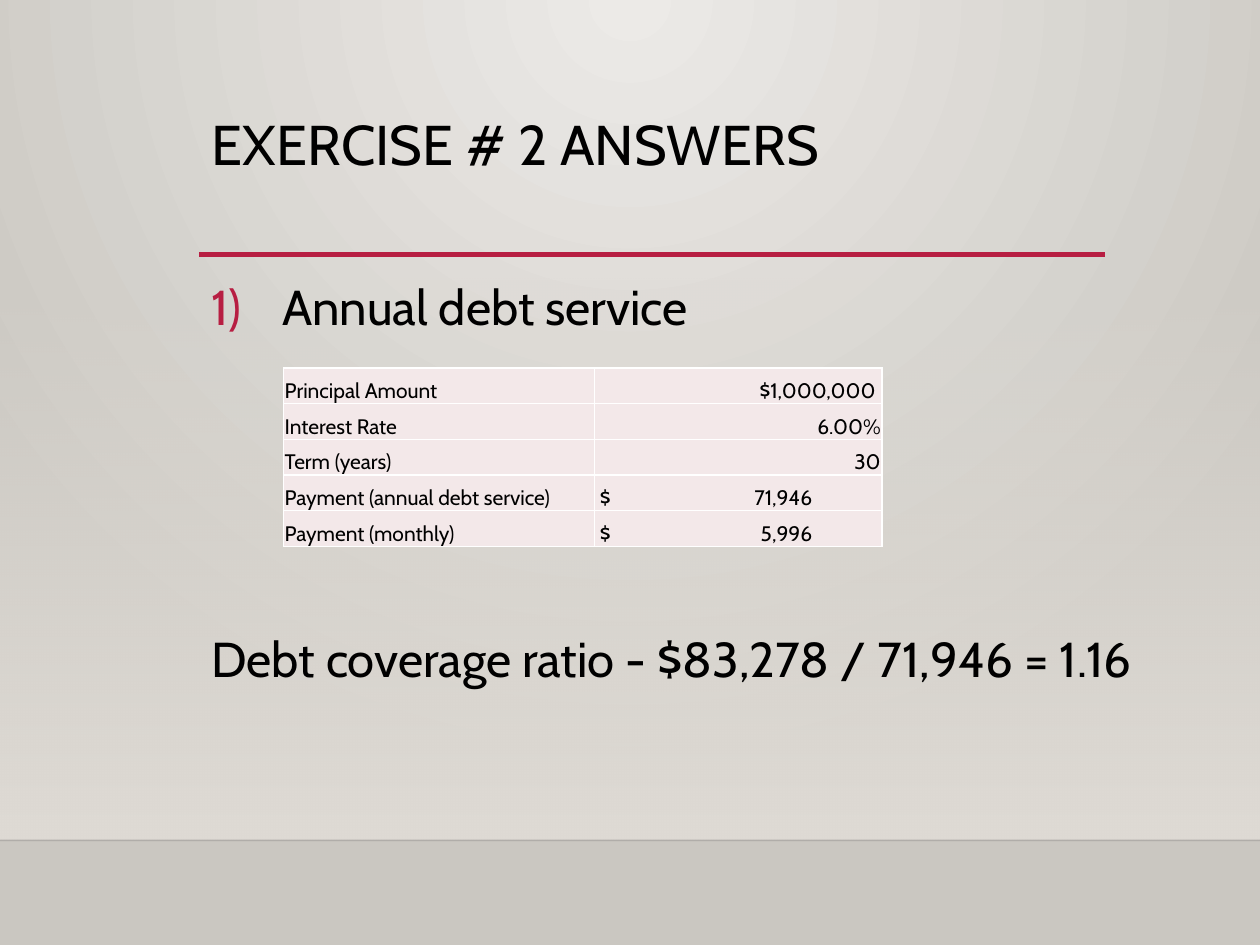
from dataclasses import dataclass

from lxml.etree import SubElement
from pptx import Presentation
from pptx.dml.color import RGBColor
from pptx.enum.shapes import MSO_CONNECTOR, MSO_SHAPE
from pptx.enum.text import MSO_ANCHOR, MSO_AUTO_SIZE, PP_ALIGN
from pptx.oxml.ns import qn
from pptx.util import Pt

FONT = "Cabin"
BLACK = RGBColor(0x00, 0x00, 0x00)
NEAR_BLACK = RGBColor(0x00, 0x00, 0x01)
WHITE = RGBColor(0xFF, 0xFF, 0xFF)
CRIMSON = RGBColor(0xB7, 0x1E, 0x42)
BLUSH = RGBColor(0xF3, 0xE8, 0xE9)
WALL_LIGHT = RGBColor(0xEC, 0xEA, 0xE7)
WALL_DARK = RGBColor(0xCA, 0xC7, 0xC1)
HAZE = RGBColor(0xDF, 0xDB, 0xD5)

SLIDE_WIDTH, SLIDE_HEIGHT = 720, 540
CONTENT_LEFT, CONTENT_WIDTH = 113.76, 517.7
FLOOR_TOP = 480.24
AMOUNT_TAB = 121.5


@dataclass(frozen=True)
class LoanTerm:
    label: str
    amount: str
    left_inset: float = 0.72
    right_inset: float = 0.72
    align: PP_ALIGN = PP_ALIGN.RIGHT


@dataclass(frozen=True)
class Rule:
    left: float
    right: float
    y: float
    color: RGBColor
    width: float
    opacity: int = 100


LOAN_TERMS = [
    LoanTerm("Principal Amount", "$1,000,000", right_inset=3.6),
    LoanTerm("Interest Rate", "6.00%"),
    LoanTerm("Term (years)", "30"),
    LoanTerm("Payment (annual debt service)", "$\t71,946", 3, align=PP_ALIGN.LEFT),
    LoanTerm("Payment (monthly)", "$\t5,996", 3, align=PP_ALIGN.LEFT),
]
RULES = [
    Rule(0, SLIDE_WIDTH, FLOOR_TOP, NEAR_BLACK, 1, opacity=20),
    Rule(CONTENT_LEFT, CONTENT_LEFT + CONTENT_WIDTH, 145.5, CRIMSON, 2.5),
]


def add_color(parent, color: RGBColor, opacity: int = 100) -> None:
    srgb = SubElement(parent, qn("a:srgbClr"), val=str(color))
    if opacity < 100:
        SubElement(srgb, qn("a:alpha"), val=str(opacity * 1000))


def swap_solid_for_gradient(properties, stops):
    solid = properties.find(qn("a:solidFill"))
    gradient = SubElement(properties, qn("a:gradFill"), rotWithShape="1")
    properties.replace(solid, gradient)
    stop_list = SubElement(gradient, qn("a:gsLst"))
    for position, (color, opacity) in zip((0, 100000), stops):
        stop = SubElement(stop_list, qn("a:gs"), pos=str(position))
        add_color(stop, color, opacity)
    return gradient


def write_text(paragraph, text: str, *, size: float, color: RGBColor = BLACK,
               align: PP_ALIGN = PP_ALIGN.LEFT, line_spacing: float = 1.0,
               space_before: float = 0) -> None:
    paragraph.alignment = align
    paragraph.line_spacing = line_spacing
    paragraph.space_before = Pt(space_before)
    run = paragraph.add_run()
    run.text = text
    run.font.name = FONT
    run.font.size = Pt(size)
    run.font.bold = False
    run.font.color.rgb = color


def paint_backdrop(slide) -> None:
    slide.background.fill.solid()
    wall = slide.background._cSld.bg.bgPr
    gradient = swap_solid_for_gradient(wall, [(WALL_LIGHT, 100), (WALL_DARK, 100)])
    path = SubElement(gradient, qn("a:path"), path="circle")
    SubElement(path, qn("a:fillToRect"), l="43000", t="0", r="43000", b="100000")

    haze = slide.shapes.add_shape(MSO_SHAPE.RECTANGLE, 0, Pt(158.4), Pt(SLIDE_WIDTH),
                                  Pt(FLOOR_TOP - 158.4))
    haze.shadow.inherit = False
    haze.line.fill.background()
    haze.fill.solid()
    gradient = swap_solid_for_gradient(haze._element.spPr, [(HAZE, 0), (HAZE, 100)])
    SubElement(gradient, qn("a:lin"), ang="5400000", scaled="0")


def draw_rule(slide, rule: Rule) -> None:
    line = slide.shapes.add_connector(MSO_CONNECTOR.STRAIGHT, Pt(rule.left), Pt(rule.y),
                                      Pt(rule.right), Pt(rule.y))
    line.line.color.rgb = rule.color
    line.line.width = Pt(rule.width)
    if rule.opacity < 100:
        srgb = line._element.spPr.find(".//" + qn("a:srgbClr"))
        SubElement(srgb, qn("a:alpha"), val=str(rule.opacity * 1000))
    SubElement(line._element.spPr, qn("a:effectLst"))


def place_title(slide) -> None:
    title = slide.shapes.title
    title.left, title.top = Pt(CONTENT_LEFT), Pt(63.36)
    title.width, title.height = Pt(CONTENT_WIDTH), Pt(82.8)
    frame = title.text_frame
    frame.auto_size = MSO_AUTO_SIZE.NONE
    frame.vertical_anchor = MSO_ANCHOR.TOP
    write_text(frame.paragraphs[0], "EXERCISE # 2 ANSWERS", size=32, line_spacing=0.9)


def add_answers(slide) -> None:
    answers = slide.shapes.add_textbox(Pt(CONTENT_LEFT), Pt(158.4), Pt(564.5), Pt(271.4))
    frame = answers.text_frame
    frame.word_wrap = True
    service = frame.paragraphs[0]
    write_text(service, "Annual debt service", size=28, line_spacing=0.9)
    numbering = service._p.get_or_add_pPr()
    numbering.set("marL", str(Pt(40.5)))
    numbering.set("indent", str(Pt(-40.5)))
    add_color(SubElement(numbering, qn("a:buClr")), CRIMSON)
    SubElement(numbering, qn("a:buAutoNum"), type="arabicParenR")
    write_text(frame.add_paragraph(), "Debt coverage ratio - $83,278 / 71,946 = 1.16",
               size=28, line_spacing=0.9, space_before=171)


def format_cell(cell, text: str, left: float, right: float, align: PP_ALIGN) -> None:
    cell.margin_left, cell.margin_right = Pt(left), Pt(right)
    cell.margin_top, cell.margin_bottom = Pt(0.72), 0
    cell.vertical_anchor = MSO_ANCHOR.BOTTOM
    paragraph = cell.text_frame.paragraphs[0]
    write_text(paragraph, text, size=12, align=align)
    if "\t" in text:
        tabs = SubElement(paragraph._p.get_or_add_pPr(), qn("a:tabLst"))
        SubElement(tabs, qn("a:tab"), pos=str(Pt(AMOUNT_TAB)), algn="r")
    properties = cell._tc.get_or_add_tcPr()
    for side in ("lnL", "lnR", "lnT", "lnB"):
        border = SubElement(properties, qn(f"a:{side}"), w=str(Pt(1)))
        add_color(SubElement(border, qn("a:solidFill")), WHITE)
    cell.fill.solid()
    cell.fill.fore_color.rgb = BLUSH


def add_loan_table(slide) -> None:
    table = slide.shapes.add_table(len(LOAN_TERMS), 2, Pt(162), Pt(210.24),
                                   Pt(342), Pt(102)).table
    table.first_row = table.horz_banding = False
    table.columns[0].width, table.columns[1].width = Pt(177.8), Pt(164.2)
    for row, term in enumerate(LOAN_TERMS):
        table.rows[row].height = Pt(20.4)
        format_cell(table.cell(row, 0), term.label, 0.72, 0.72, PP_ALIGN.LEFT)
        format_cell(table.cell(row, 1), term.amount, term.left_inset,
                    term.right_inset, term.align)


def main() -> None:
    deck = Presentation()
    deck.slide_width, deck.slide_height = Pt(SLIDE_WIDTH), Pt(SLIDE_HEIGHT)
    slide = deck.slides.add_slide(deck.slide_layouts[5])
    paint_backdrop(slide)
    for rule in RULES:
        draw_rule(slide, rule)
    place_title(slide)
    add_answers(slide)
    add_loan_table(slide)
    deck.save("out.pptx")


if __name__ == "__main__":
    main()
